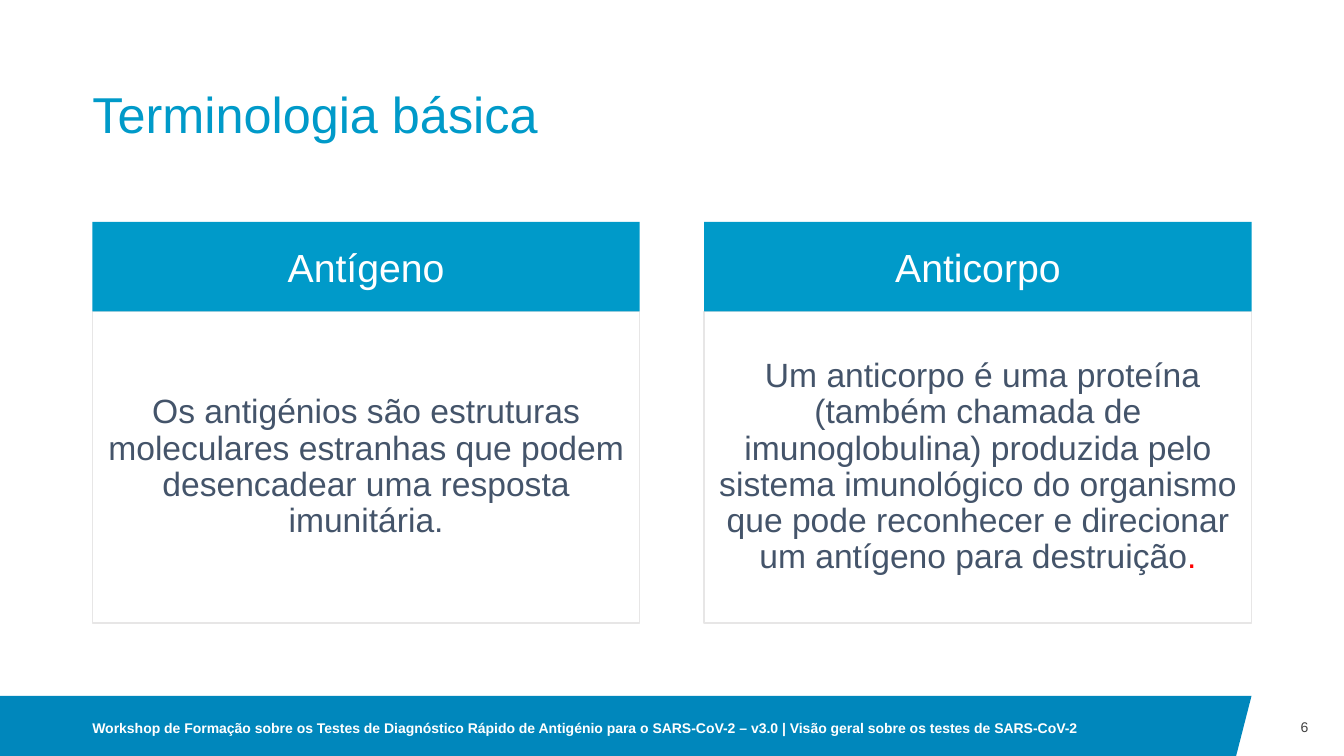
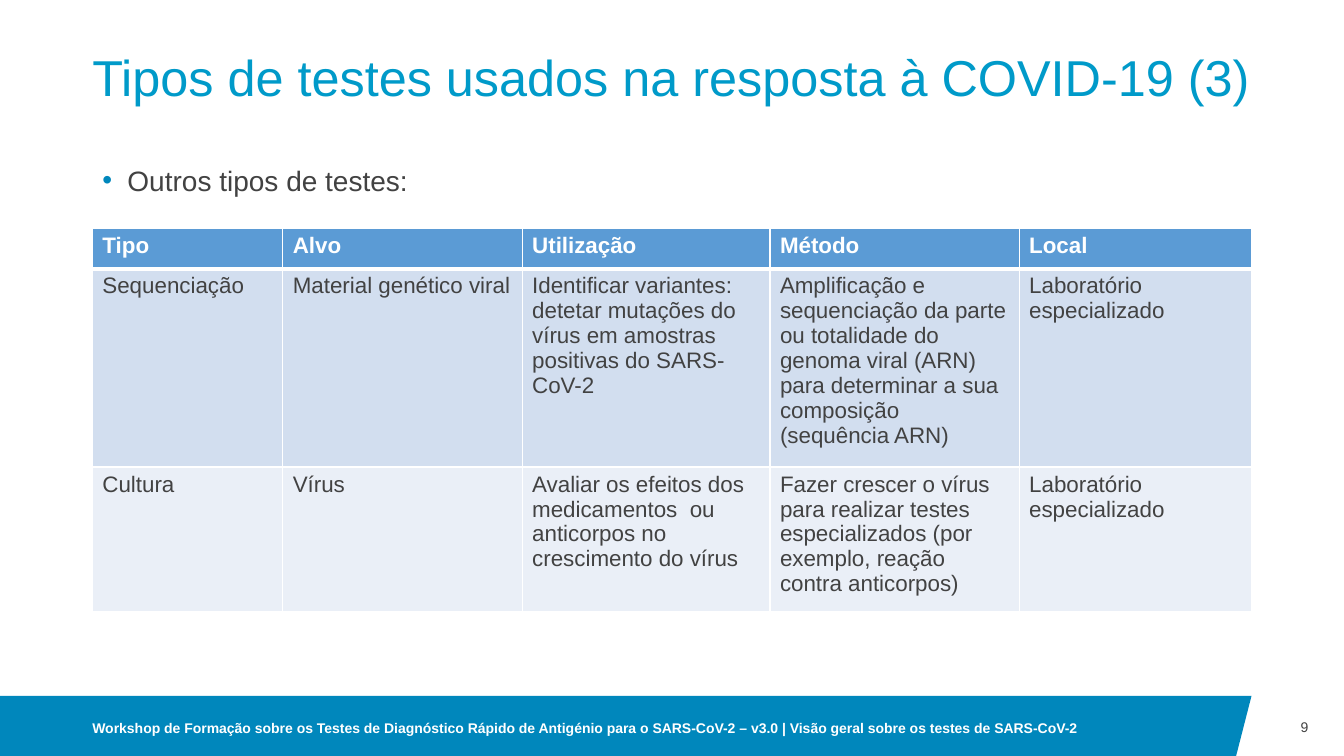
from pptx import Presentation
from pptx.dml.color import RGBColor
from pptx.enum.shapes import MSO_SHAPE
from pptx.enum.text import MSO_ANCHOR, PP_ALIGN
from pptx.oxml import parse_xml
from pptx.oxml.ns import nsdecls
from pptx.util import Pt

# Shared style
FONT = "Arial"
SKY, BAND, INK, SLATE = "009AC9", "0087BC", "424242", "44546A"
WHITE, EDGE, RED = "FFFFFF", "E7E6E6", "FF0000"
HEAD, ROWS = "5B9BD5", ("D2DEEF", "EAEFF7")
LEFT, WIDE = 66, 828
FOOT = ("Workshop de Formação sobre os Testes de Diagnóstico Rápido de Antigénio "
        "para o SARS-CoV-2 – v3.0 | Visão geral sobre os testes de SARS-CoV-2")


def tint(code):
    return RGBColor.from_string(code)


class Deck:
    def __init__(self):
        self.prs = Presentation()
        self.prs.slide_width, self.prs.slide_height = Pt(960), Pt(540)
        self.slide = None

    def page(self, title, num, top):
        self.slide = self.prs.slides.add_slide(self.prs.slide_layouts[6])
        self.band()
        para = self.text(title, LEFT, top, WIDE, 74, 36, SKY, MSO_ANCHOR.BOTTOM)
        para.line_spacing = 0.9
        para = self.text(str(num), 894, 497, 40.5, 45, 10, INK)
        para.alignment = PP_ALIGN.RIGHT
        self.text(FOOT, LEFT, 500.5, 745, 39.5, 10, WHITE, bold=True)

    def band(self):
        edge = self.slide.shapes.build_freeform(0, 497, scale=Pt(1))
        edge.add_line_segments([(894, 497), (883, 540), (0, 540)])
        self.paint(edge.convert_to_shape(), BAND)

    def paint(self, shape, fill, line=None):
        shape.shadow.inherit = False
        shape.fill.solid()
        shape.fill.fore_color.rgb = tint(fill)
        if line:
            shape.line.color.rgb = tint(line)
            shape.line.width = Pt(1)
        else:
            shape.line.fill.background()

    def label(self, para, words, size, color, bold=False):
        para.text = words
        font = para.font
        font.name, font.size, font.bold = FONT, Pt(size), bold
        font.color.rgb = tint(color)
        return para

    def frame(self, shape, anchor, side=0, edge=0):
        frame = shape.text_frame
        frame.word_wrap = True
        frame.vertical_anchor = anchor
        frame.margin_left = frame.margin_right = Pt(side)
        frame.margin_top = frame.margin_bottom = Pt(edge)
        return frame.paragraphs[0]

    def text(self, words, x, y, w, h, size, color,
             anchor=MSO_ANCHOR.MIDDLE, bold=False, side=0, edge=0):
        box = self.slide.shapes.add_textbox(Pt(x), Pt(y), Pt(w), Pt(h))
        para = self.frame(box, anchor, side, edge)
        return self.label(para, words, size, color, bold)

    def box(self, words, x, y, w, h, size, color, fill, line=None):
        shape = self.slide.shapes.add_shape(
            MSO_SHAPE.RECTANGLE, Pt(x), Pt(y), Pt(w), Pt(h))
        self.paint(shape, fill, line)
        para = self.frame(shape, MSO_ANCHOR.MIDDLE, 7.2, 7.2)
        para.alignment = PP_ALIGN.CENTER
        return self.label(para, words, size, color)

    def card(self, x, head, body):
        para = self.box(body, x, 222.5, 391, 222.5, 24, SLATE, WHITE, EDGE)
        para.line_spacing = 0.9
        self.box(head, x, 158.5, 391, 64, 28, WHITE, SKY)
        return para

    def bullet(self, words, y):
        para = self.text(words, LEFT, y, WIDE, 36, 20, INK,
                         MSO_ANCHOR.TOP, side=7.2, edge=3.6)
        # Bullet marks go before the paragraph's font settings
        props = para._p.get_or_add_pPr()
        props.set("marL", str(Pt(18)))
        props.set("indent", str(-Pt(18)))
        marks = (f'<a:buClr {nsdecls("a")}><a:srgbClr val="{BAND}"/></a:buClr>',
                 f'<a:buFont {nsdecls("a")} typeface="{FONT}"/>',
                 f'<a:buChar {nsdecls("a")} char="•"/>')
        for spot, mark in enumerate(marks):
            props.insert(spot, parse_xml(mark))

    def rule(self, cell, side, width):
        cell._tc.get_or_add_tcPr().append(parse_xml(
            f'<a:ln{side} {nsdecls("a")} w="{Pt(width)}"><a:solidFill>'
            f'<a:srgbClr val="{WHITE}"/></a:solidFill></a:ln{side}>'))

    def table(self, data, y, cols, rows):
        grid = self.slide.shapes.add_table(
            len(rows), len(cols), Pt(LEFT), Pt(y), Pt(sum(cols)), Pt(sum(rows))).table
        for col, width in zip(grid.columns, cols):
            col.width = Pt(width)
        for r, (line, high) in enumerate(zip(data, rows)):
            grid.rows[r].height = Pt(high)
            top = r == 0
            for c, words in enumerate(line):
                cell = grid.cell(r, c)
                for side in "LRTB":
                    thick = (top and side == "B") or (r == 1 and side == "T")
                    self.rule(cell, side, 3 if thick else 1)
                cell.fill.solid()
                cell.fill.fore_color.rgb = tint(HEAD if top else ROWS[r - 1])
                self.label(cell.text_frame.paragraphs[0], words, 16,
                           WHITE if top else INK, top)


def main():
    deck = Deck()

    # Basic terms
    deck.page("Terminologia básica", 6, 29)
    deck.card(LEFT, "Antígeno",
              "Os antigénios são estruturas moleculares estranhas que podem "
              "desencadear uma resposta imunitária.")
    para = deck.card(503, "Anticorpo",
                     " Um anticorpo é uma proteína (também chamada de imunoglobulina) "
                     "produzida pelo sistema imunológico do organismo que pode "
                     "reconhecer e direcionar um antígeno para destruição")
    stop = para.add_run()
    stop.text = "."
    stop.font.color.rgb = tint(RED)

    # Other kinds of test
    deck.page("Tipos de testes usados na resposta à COVID-19 (3)", 9, 3)
    deck.bullet("Outros tipos de testes:", 113)
    deck.table([
        ["Tipo", "Alvo", "Utilização", "Método", "Local"],
        ["Sequenciação", "Material genético viral",
         "Identificar variantes: detetar mutações do vírus em amostras "
         "positivas do SARS-CoV-2",
         "Amplificação e sequenciação da parte ou totalidade do genoma viral "
         "(ARN) para determinar a sua composição (sequência ARN)",
         "Laboratório especializado"],
        ["Cultura", "Vírus",
         "Avaliar os efeitos dos medicamentos  ou anticorpos no crescimento do vírus",
         "Fazer crescer o vírus para realizar testes especializados "
         "(por exemplo, reação contra anticorpos)",
         "Laboratório especializado"],
    ], 163, (136, 171, 177, 178, 166), (29, 131.5, 95.5))

    deck.prs.save("out.pptx")


if __name__ == "__main__":
    main()
